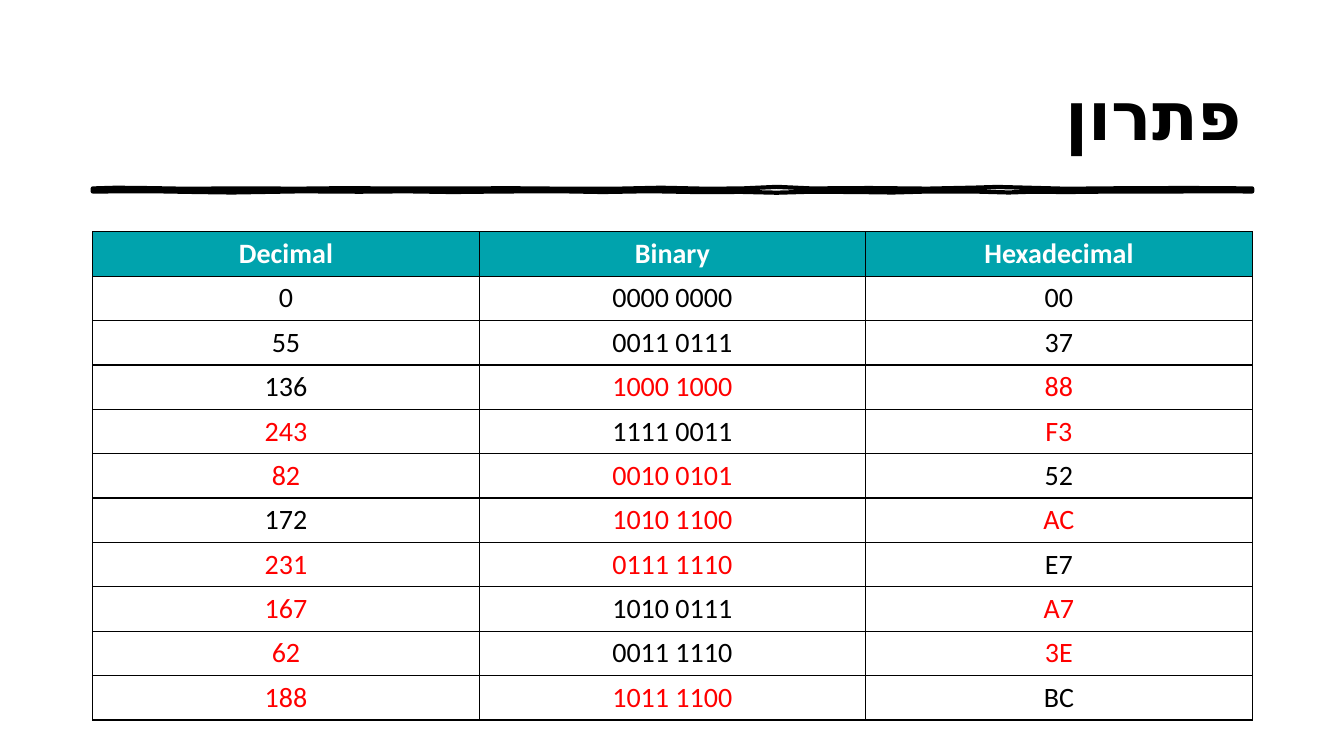
from dataclasses import dataclass

from lxml.etree import SubElement
from pptx import Presentation
from pptx.dml.color import RGBColor
from pptx.enum.text import MSO_ANCHOR as Anchor, PP_ALIGN as Align
from pptx.oxml.ns import qn
from pptx.slide import Slide
from pptx.table import _Cell as Cell
from pptx.text.text import _Paragraph as Paragraph
from pptx.util import Emu, Inches, Pt

COLORS = {"ink": "000000", "paper": "FFFFFF", "header": "00A3AD", "answer": "FF0000"}
FONT = "Calibri"
SLIDE_WIDTH, SLIDE_HEIGHT = Inches(13.33), Inches(7.5)

# Shares of the slide, in percent
LEFT, WIDTH = 6.9, 86.27
TITLE_TOP, TITLE_HEIGHT = 5.33, 19.33
RULE_TOP = 24.93
TABLE_TOP, ROW_HEIGHT = 30.67, 5.87

# Brush rule: (percent of its length, height in hundredths of an inch)
UPPER_EDGE = [(0, 0), (2, -0.7), (5, -0.3), (8, 0.3), (12, 0), (18, 0.2), (22, -0.3),
              (25, 0), (30, 0.1), (36, -0.2), (40, 0.2), (45, 0.3), (49, -0.7),
              (53, 0.3), (56, 0), (59, -1.6), (62, 0), (67, -0.4), (72, 0.2),
              (76, -0.8), (78, -1.5), (80, -0.9), (84, 0.3), (90, -0.3), (95, -0.4), (100, 0)]
LOWER_EDGE = [(100, 3), (97, 2.7), (93, 3), (88, 3), (84, 3.5), (81, 3.2), (79, 4),
              (76, 3), (72, 3), (69, 4), (66, 3.5), (62, 3.2), (59, 4.2), (56, 3.4),
              (52, 3.5), (48, 2.7), (44, 3.5), (40, 2.7), (35, 3), (31, 3.5), (27, 2.8),
              (23, 3.2), (18, 2.8), (12, 4), (9, 3.5), (5, 2.7), (0, 3)]


@dataclass
class Conversion:
    """One solved row; solved lists the columns that were filled in."""
    decimal: str
    binary: str
    hexadecimal: str
    solved: tuple[int, ...] = ()

    def values(self) -> tuple[str, str, str]:
        return self.decimal, self.binary, self.hexadecimal


HEADINGS = Conversion("Decimal", "Binary", "Hexadecimal")
CONVERSIONS = [
    Conversion("0", "0000 0000", "00"),
    Conversion("55", "0011 0111", "37"),
    Conversion("136", "1000 1000", "88", (1, 2)),
    Conversion("243", "1111 0011", "F3", (0, 2)),
    Conversion("82", "0010 0101", "52", (0, 1)),
    Conversion("172", "1010 1100", "AC", (1, 2)),
    Conversion("231", "0111 1110", "E7", (0, 1)),
    Conversion("167", "1010 0111", "A7", (0, 2)),
    Conversion("62", "0011 1110", "3E", (0, 2)),
    Conversion("188", "1011 1100", "BC", (0, 1)),
]


def across(percent: float) -> Emu:
    return Emu(round(SLIDE_WIDTH * percent / 100))


def down(percent: float) -> Emu:
    return Emu(round(SLIDE_HEIGHT * percent / 100))


def color(name: str) -> RGBColor:
    return RGBColor.from_string(COLORS[name])


def set_font(paragraph: Paragraph, size: int, color_name: str, bold: bool) -> None:
    font = paragraph.font
    font.name, font.size, font.bold = FONT, Pt(size), bold
    font.color.rgb = color(color_name)


def draw_title(slide: Slide, text: str) -> None:
    box = slide.shapes.add_textbox(across(LEFT), down(TITLE_TOP), across(WIDTH), down(TITLE_HEIGHT))
    frame = box.text_frame
    frame.word_wrap = True
    frame.vertical_anchor = Anchor.MIDDLE
    paragraph = frame.paragraphs[0]
    paragraph.text = text
    paragraph.alignment = Align.RIGHT
    set_font(paragraph, 48, "ink", True)
    # Right-to-left text, with the font for complex scripts
    properties = paragraph._p.get_or_add_pPr()
    properties.set("rtl", "1")
    run_properties = paragraph.runs[0]._r.get_or_add_rPr()
    run_properties.set("lang", "he-IL")
    run_properties.set("sz", "4800")
    run_properties.set("b", "1")
    SubElement(run_properties, qn("a:cs")).set("typeface", FONT)


def draw_brush_rule(slide: Slide) -> None:
    points = [(across(LEFT + WIDTH * share / 100), down(RULE_TOP) + Inches(height / 100))
              for share, height in UPPER_EDGE + LOWER_EDGE]
    builder = slide.shapes.build_freeform(*points[0])
    builder.add_line_segments(points[1:], close=True)
    rule = builder.convert_to_shape()
    rule.shadow.inherit = False
    rule.fill.background()
    rule.line.color.rgb = color("ink")
    rule.line.width = Pt(3)


def add_borders(cell: Cell) -> None:
    properties = cell._tc.get_or_add_tcPr()
    for side in ("lnL", "lnR", "lnT", "lnB"):
        border = SubElement(properties, qn(f"a:{side}"), w=str(Pt(1)))
        fill = SubElement(border, qn("a:solidFill"))
        SubElement(fill, qn("a:srgbClr"), val=COLORS["ink"])


def fill_cell(cell: Cell, text: str, fill: str, text_color: str, bold: bool) -> None:
    add_borders(cell)
    cell.fill.solid()
    cell.fill.fore_color.rgb = color(fill)
    paragraph = cell.text_frame.paragraphs[0]
    paragraph.text = text
    paragraph.alignment = Align.CENTER
    set_font(paragraph, 20, text_color, bold)


def draw_table(slide: Slide, conversions: list[Conversion]) -> None:
    rows = [HEADINGS, *conversions]
    table = slide.shapes.add_table(len(rows), len(HEADINGS.values()), across(LEFT), down(TABLE_TOP),
                                   across(WIDTH), down(ROW_HEIGHT * len(rows))).table
    for row_index, conversion in enumerate(rows):
        for column_index, text in enumerate(conversion.values()):
            cell = table.cell(row_index, column_index)
            if row_index == 0:
                fill_cell(cell, text, "header", "paper", True)
            else:
                text_color = "answer" if column_index in conversion.solved else "ink"
                fill_cell(cell, text, "paper", text_color, False)


def main() -> None:
    presentation = Presentation()
    presentation.slide_width, presentation.slide_height = SLIDE_WIDTH, SLIDE_HEIGHT
    slide = presentation.slides.add_slide(presentation.slide_layouts[6])
    draw_brush_rule(slide)
    draw_title(slide, "פתרון")
    draw_table(slide, CONVERSIONS)
    presentation.save("out.pptx")


if __name__ == "__main__":
    main()
